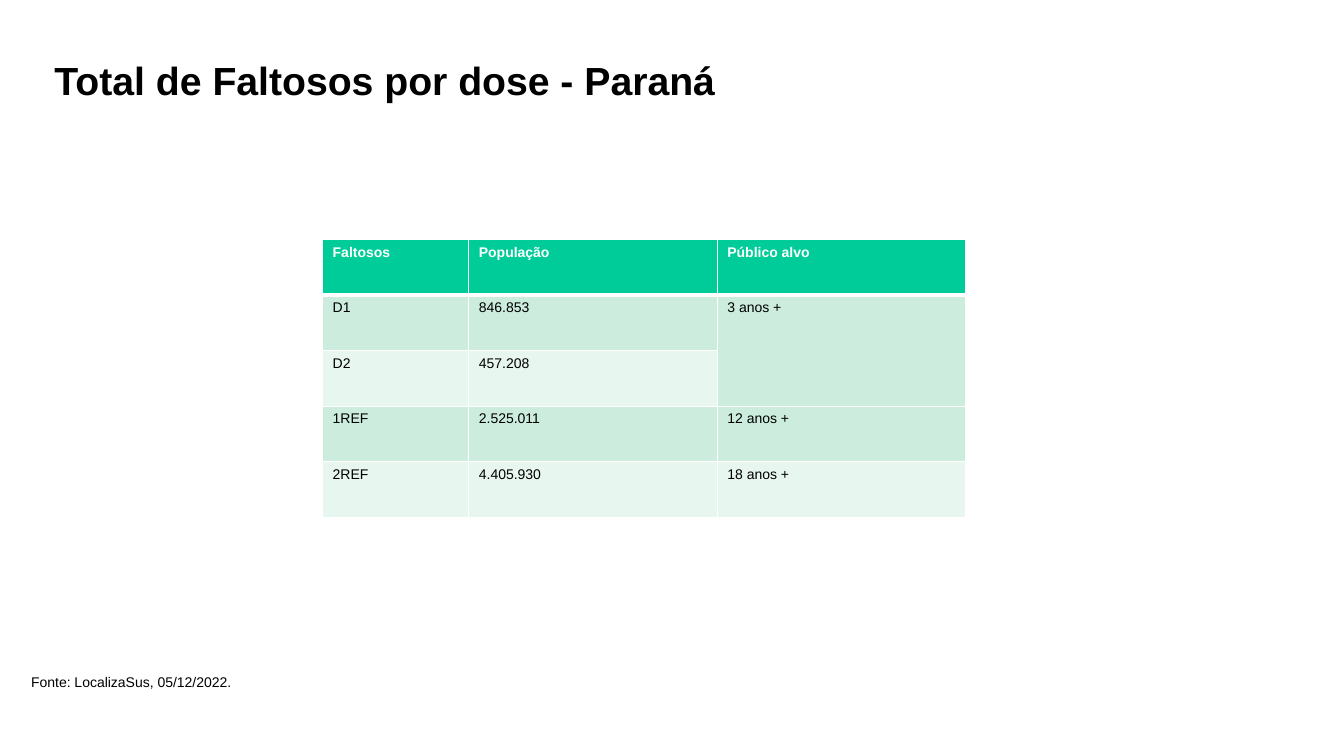
from dataclasses import dataclass

from lxml import etree
from pptx import Presentation
from pptx import util as u
from pptx.dml.color import RGBColor
from pptx.enum import text
from pptx.oxml import ns

PX = 9144  # 100 px to the inch


@dataclass(frozen=True)
class Theme:
    font: str = "Arial"
    ink: str = "000000"
    paper: str = "FFFFFF"
    header: str = "00CC99"
    bands: tuple = ("CCECDE", "E7F6EF")
    title_size: int = 28
    text_size: int = 10
    rule: int = 1
    header_rule: int = 3


THEME = Theme()

HEADINGS = ("Faltosos", "População", "Público alvo")
DOSES = (
    ("D1", "846.853", "3 anos +"),
    ("D2", "457.208", ""),
    ("1REF", "2.525.011", "12 anos +"),
    ("2REF", "4.405.930", "18 anos +"),
)


def place(shape, box):
    for name, length in zip(("left", "top", "width", "height"), box):
        setattr(shape, name, length * PX)


def write(frame, words, size, color=THEME.ink, bold=False, **paragraph_format):
    paragraph = frame.paragraphs[0]
    paragraph.text = words
    for name, value in paragraph_format.items():
        setattr(paragraph, name, value)
    font = paragraph.font
    for name, value in {"name": THEME.font, "size": u.Pt(size), "bold": bold}.items():
        setattr(font, name, value)
    font.color.rgb = RGBColor.from_string(color)


def format_frame(frame, anchor):
    settings = {
        "word_wrap": True,
        "auto_size": text.MSO_AUTO_SIZE.NONE,
        "vertical_anchor": anchor,
        "margin_left": 10 * PX,
        "margin_right": 10 * PX,
        "margin_top": 5 * PX,
        "margin_bottom": 5 * PX,
    }
    for name, value in settings.items():
        setattr(frame, name, value)


def add_title(slide, box):
    title = slide.shapes.title
    place(title, box)
    format_frame(title.text_frame, text.MSO_ANCHOR.TOP)
    write(title.text_frame, "Total de Faltosos por dose - Paraná", THEME.title_size,
          bold=True, alignment=text.PP_ALIGN.LEFT, line_spacing=0.9)


def add_source_note(slide, box):
    note = slide.shapes.add_textbox(*(length * PX for length in box))
    format_frame(note.text_frame, text.MSO_ANCHOR.BOTTOM)
    write(note.text_frame, "Fonte: LocalizaSus, 05/12/2022.", THEME.text_size,
          alignment=text.PP_ALIGN.JUSTIFY, line_spacing=0.9)


def set_borders(cell, widths):
    """Draw cell borders; widths maps each side (L, R, T, B) to points."""
    properties = cell._tc.get_or_add_tcPr()
    for side, width in widths.items():
        line = etree.SubElement(properties, ns.qn(f"a:ln{side}"), w=str(u.Pt(width)))
        fill = etree.SubElement(line, ns.qn("a:solidFill"))
        etree.SubElement(fill, ns.qn("a:srgbClr"), val=THEME.paper)


def add_dose_table(slide, box, first_width):
    rows = (HEADINGS, *DOSES)
    left, top, width, height = (length * PX for length in box)
    table = slide.shapes.add_table(len(rows), len(HEADINGS), left, top, width, height).table
    other_width = (width - first_width * PX) // (len(HEADINGS) - 1)
    for index, column in enumerate(table.columns):
        column.width = other_width if index else first_width * PX
    for row_index, row in enumerate(rows):
        is_header = row_index == 0
        fill = THEME.header if is_header else THEME.bands[(row_index - 1) % 2]
        borders = dict.fromkeys("LRTB", THEME.rule)
        if row_index < 2:
            borders["B" if is_header else "T"] = THEME.header_rule
        for column_index, words in enumerate(row):
            cell = table.cell(row_index, column_index)
            write(cell.text_frame, words, THEME.text_size,
                  THEME.paper if is_header else THEME.ink, is_header)
            set_borders(cell, borders)
            cell.fill.solid()
            cell.fill.fore_color.rgb = RGBColor.from_string(fill)
    table.cell(1, 2).merge(table.cell(2, 2))


def main():
    presentation = Presentation()
    presentation.slide_width = 1333 * PX
    presentation.slide_height = 750 * PX
    slide = presentation.slides.add_slide(presentation.slide_layouts.get_by_name("Title Only"))
    add_title(slide, (44, 56, 984, 55))
    add_source_note(slide, (21, 651, 425, 39))
    add_dose_table(slide, (320, 238, 638, 275), first_width=145)
    presentation.save("out.pptx")


if __name__ == "__main__":
    main()
